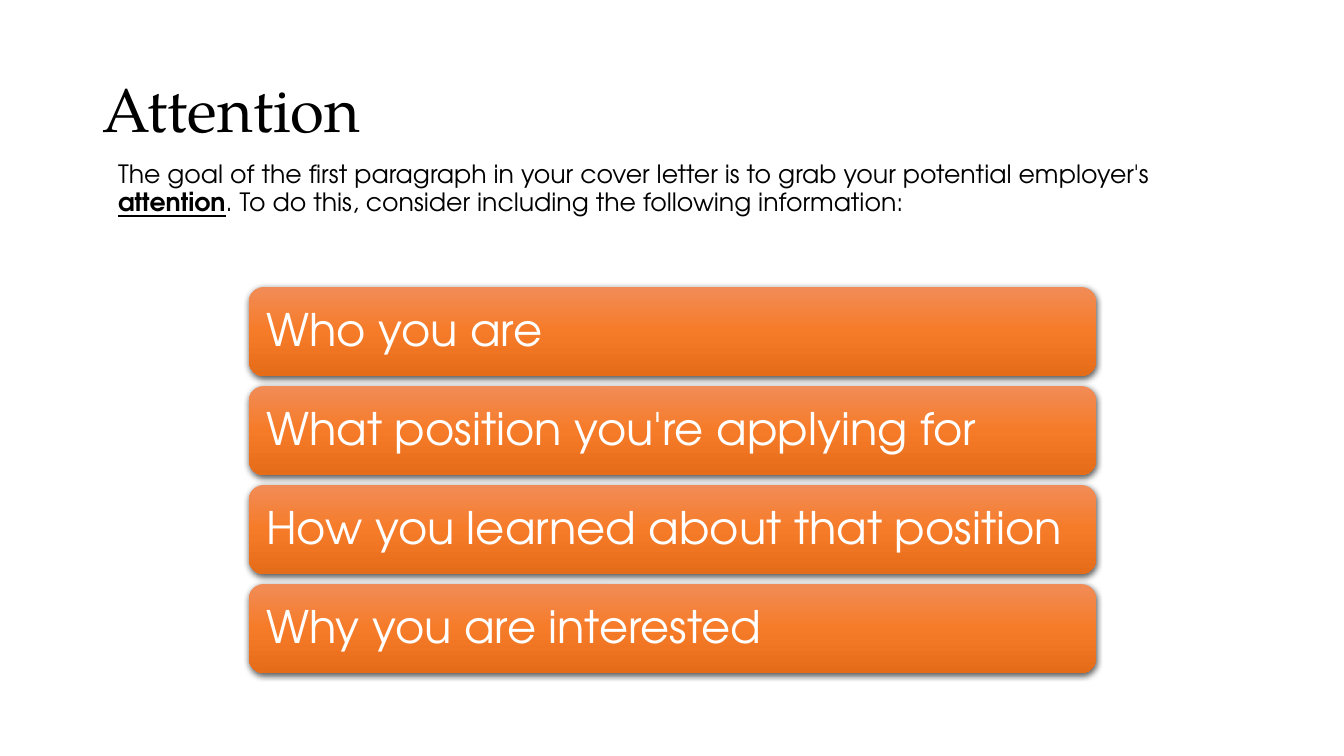
import pptx
import pptx.dml.color
import pptx.enum.shapes
import pptx.enum.text
import pptx.oxml
import pptx.oxml.ns
import pptx.util

TITLE = "Attention"
INTRO = [
    ("The goal of the first paragraph in your cover letter is to grab your potential employer's ", False),
    ("attention", True),
    (". To do this, consider including the following information:", False),
]
POINTS = [
    "Who you are",
    "What position you're applying for",
    "How you learned about that position",
    "Why you are interested",
]

PX = 914400 / 100.8
SLIDE_SIZE = (1344, 756)
TITLE_AREA = (92, 40, 1159, 146)
INTRO_AREA = (108, 157, 1159, 480)
BAR_LEFT, BAR_TOP, BAR_WIDTH, BAR_HEIGHT, BAR_PITCH = 249, 287, 847, 89, 99
BAR_INSET = 13

HEADING_FONT, BODY_FONT = "TeX Gyre Pagella", "TeX Gyre Adventor"
BLACK, WHITE = "000000", "FFFFFF"
BAR_GRADIENT = [(0, "F18C57"), (50, "F67B28"), (100, "E56C19")]
DRAWING = 'xmlns:a="http://schemas.openxmlformats.org/drawingml/2006/main"'


def px(length):
    return pptx.util.Emu(round(length * PX))


def color(value):
    return pptx.dml.color.RGBColor.from_string(value)


def place(shape, area):
    shape.left, shape.top, shape.width, shape.height = map(px, area)


def style_font(font, name, size, value):
    font.name, font.size = name, pptx.util.Pt(size)
    font.color.rgb = color(value)


def style_paragraph(para):
    para.alignment = pptx.enum.text.PP_ALIGN.LEFT
    para.line_spacing = 0.9
    para.space_before = pptx.util.Pt(0)


def fill_bar(bar):
    """Give the bar its vertical gradient and soft shadow, without an outline."""
    bar.line.fill.background()
    bar.shadow.inherit = False
    stops = "".join(
        f'<a:gs pos="{position * 1000}"><a:srgbClr val="{value}"/></a:gs>'
        for position, value in BAR_GRADIENT)
    properties = bar.fill._xPr
    geometry = properties.find(pptx.oxml.ns.qn("a:prstGeom"))
    geometry.addnext(pptx.oxml.parse_xml(
        f'<a:gradFill {DRAWING} rotWithShape="1"><a:gsLst>{stops}</a:gsLst>'
        '<a:lin ang="5400000" scaled="0"/></a:gradFill>'))
    effects = properties.find(pptx.oxml.ns.qn("a:effectLst"))
    effects.append(pptx.oxml.parse_xml(
        f'<a:outerShdw {DRAWING} blurRad="57150" dist="19050" dir="5400000" '
        'algn="ctr" rotWithShape="0"><a:srgbClr val="000000">'
        '<a:alpha val="63000"/></a:srgbClr></a:outerShdw>'))


def add_title(slide):
    title = slide.shapes.title
    place(title, TITLE_AREA)
    frame = title.text_frame
    frame.text = TITLE
    frame.auto_size = pptx.enum.text.MSO_AUTO_SIZE.NONE
    frame.vertical_anchor = pptx.enum.text.MSO_ANCHOR.MIDDLE
    style_paragraph(frame.paragraphs[0])
    style_font(frame.paragraphs[0].runs[0].font, HEADING_FONT, 44, BLACK)


def add_intro(slide):
    body = slide.placeholders[1]
    place(body, INTRO_AREA)
    frame = body.text_frame
    frame.auto_size = pptx.enum.text.MSO_AUTO_SIZE.NONE
    para = frame.paragraphs[0]
    style_paragraph(para)
    properties = para._p.get_or_add_pPr()
    properties.set("marL", "0")
    properties.set("indent", "0")
    properties.append(pptx.oxml.parse_xml(f"<a:buNone {DRAWING}/>"))
    for text, emphasized in INTRO:
        run = para.add_run()
        run.text = text
        style_font(run.font, BODY_FONT, 18, BLACK)
        run.font.bold = run.font.underline = emphasized


def add_bar(slide, index, text):
    area = (BAR_LEFT, BAR_TOP + index * BAR_PITCH, BAR_WIDTH, BAR_HEIGHT)
    bar = slide.shapes.add_shape(
        pptx.enum.shapes.MSO_SHAPE.ROUNDED_RECTANGLE, *map(px, area))
    fill_bar(bar)
    frame = bar.text_frame
    frame.text = text
    frame.word_wrap = True
    frame.vertical_anchor = pptx.enum.text.MSO_ANCHOR.MIDDLE
    frame.margin_left = frame.margin_right = px(BAR_INSET)
    frame.margin_top = frame.margin_bottom = px(BAR_INSET)
    style_paragraph(frame.paragraphs[0])
    style_font(frame.paragraphs[0].runs[0].font, BODY_FONT, 32, WHITE)


def main():
    deck = pptx.Presentation()
    deck.slide_width, deck.slide_height = map(px, SLIDE_SIZE)
    slide = deck.slides.add_slide(deck.slide_layouts[1])
    add_title(slide)
    add_intro(slide)
    for index, text in enumerate(POINTS):
        add_bar(slide, index, text)
    deck.save("out.pptx")


if __name__ == "__main__":
    main()
